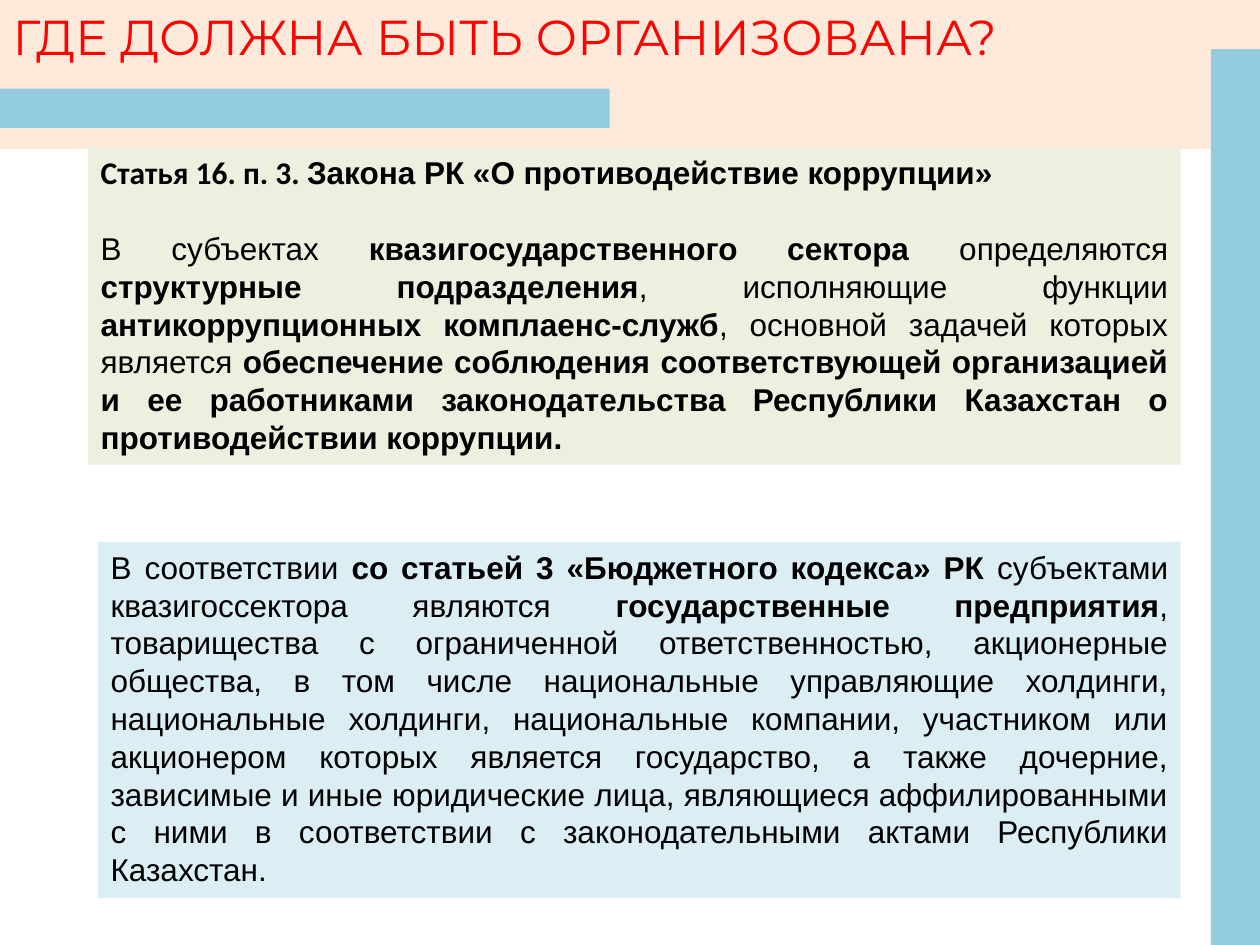
from dataclasses import dataclass

from pptx import Presentation
from pptx.dml.color import RGBColor
from pptx.enum.shapes import MSO_SHAPE
from pptx.enum.text import MSO_ANCHOR, MSO_AUTO_SIZE, PP_ALIGN
from pptx.util import Cm, Pt

RECTANGLE = MSO_SHAPE.RECTANGLE
TOP = MSO_ANCHOR.TOP
FIXED = MSO_AUTO_SIZE.NONE
LEFT, JUSTIFY = PP_ALIGN.LEFT, PP_ALIGN.JUSTIFY
TITLE_ONLY = 5


@dataclass(frozen=True)
class Theme:
    """Colours, fonts and type sizes of the deck."""

    accent: str = "93CDDD"
    banner: str = "FDEADA"
    law: str = "EBF1DE"
    code: str = "DBEEF4"
    title_text: str = "FF0000"
    body_text: str = "000000"
    title_font: str = "Montserrat"
    body_font: str = "Arial"
    lead_font: str = "Calibri"
    title_size: float = 28
    body_size: float = 18
    line_pitch: float = 21.6


def apply_format(target, values):
    """Set each named attribute on the target."""
    for name, value in values.items():
        setattr(target, name, value)


class SlideBuilder:
    """Draws styled elements on the current slide."""

    def __init__(self, slide, theme):
        """Keep the slide and its theme."""
        self.slide = slide
        self.theme = theme

    def paint(self, shape, colour):
        """Give a shape a solid fill."""
        shape.fill.solid()
        shape.fill.fore_color.rgb = RGBColor.from_string(colour)

    def frame(self, shape):
        """Return the text frame set to wrap from the top."""
        frame = shape.text_frame
        apply_format(frame, {"word_wrap": True, "auto_size": FIXED, "vertical_anchor": TOP})
        return frame

    def add_span(self, para, text, colour, **font):
        """Add a formatted span to a paragraph."""
        span = para.add_run()
        span.text = text
        apply_format(span.font, font)
        span.font.color.rgb = RGBColor.from_string(colour)

    def title(self, text, left, top, width, height):
        """Fill and place the title placeholder."""
        theme = self.theme
        box = self.slide.shapes.title
        place = {"left": left, "top": top, "width": width, "height": height}
        apply_format(box, {name: Cm(value) for name, value in place.items()})
        self.paint(box, theme.banner)
        para = self.frame(box).paragraphs[0]
        para.alignment = LEFT
        self.add_span(para, text, theme.title_text, name=theme.title_font,
                      size=Pt(theme.title_size), bold=False)

    def bar(self, colour, left, top, width, height):
        """Draw a plain filled rectangle."""
        place = (Cm(value) for value in (left, top, width, height))
        box = self.slide.shapes.add_shape(RECTANGLE, *place)
        box.shadow.inherit = False
        box.line.fill.background()
        self.paint(box, colour)
        return box

    def panel(self, colour, place, paragraphs):
        """Draw a rectangle holding paragraphs of mixed weight."""
        theme = self.theme
        frame = self.frame(self.bar(colour, *place))
        for index, (alignment, spans) in enumerate(paragraphs):
            para = frame.add_paragraph() if index else frame.paragraphs[0]
            apply_format(para, {
                "alignment": alignment,
                "line_spacing": Pt(theme.line_pitch),
                "space_before": Pt(theme.line_pitch if index else 0),
            })
            for text, bold, font in spans:
                self.add_span(para, text, theme.body_text, name=font,
                              size=Pt(theme.body_size), bold=bold)


def alternate(font, *texts):
    """Pair texts with weights, regular first and then bold in turn."""
    return [(text, index % 2 == 1, font) for index, text in enumerate(texts)]


def main():
    """Build the slide and save the deck."""
    theme = Theme()
    deck = Presentation()
    apply_format(deck, {"slide_width": Cm(25.4), "slide_height": Cm(19.05)})
    page = SlideBuilder(deck.slides.add_slide(deck.slide_layouts[TITLE_ONLY]), theme)

    page.title("ГДЕ ДОЛЖНА БЫТЬ ОРГАНИЗОВАНА?", 0, 0, 25.4, 3)

    code_spans = alternate(
        theme.body_font,
        "В соответствии ",
        "со статьей 3 «Бюджетного кодекса» РК ",
        "субъектами квазигоссектора являются ",
        "государственные предприятия",
        ", товарищества с ограниченной ответственностью, акционерные общества, "
        "в том числе национальные управляющие холдинги, национальные холдинги, "
        "национальные компании, участником или акционером которых является "
        "государство, а также дочерние, зависимые и иные юридические лица, "
        "являющиеся аффилированными с ними в соответствии с законодательными "
        "актами Республики Казахстан.",
    )
    page.panel(theme.code, (1.98, 10.92, 21.82, 7.19), [(JUSTIFY, code_spans)])

    law_heading = [
        ("Статья 16. п. 3. ", True, theme.lead_font),
        ("Закона РК «О противодействие коррупции»", True, theme.body_font),
    ]
    law_spans = alternate(
        theme.body_font,
        "В субъектах ",
        "квазигосударственного сектора ",
        "определяются ",
        "структурные подразделения",
        ", исполняющие функции ",
        "антикоррупционных комплаенс-служб",
        ", основной задачей которых является ",
        "обеспечение соблюдения соответствующей организацией и ее работниками "
        "законодательства Республики Казахстан о противодействии коррупции.",
    )
    page.panel(theme.law, (1.78, 2.97, 22.02, 6.4),
               [(LEFT, law_heading), (JUSTIFY, law_spans)])

    page.bar(theme.accent, 24.41, 0.99, 0.99, 18.06)
    page.bar(theme.accent, 0, 1.79, 12.29, 0.79)

    deck.save("out.pptx")


if __name__ == "__main__":
    main()
